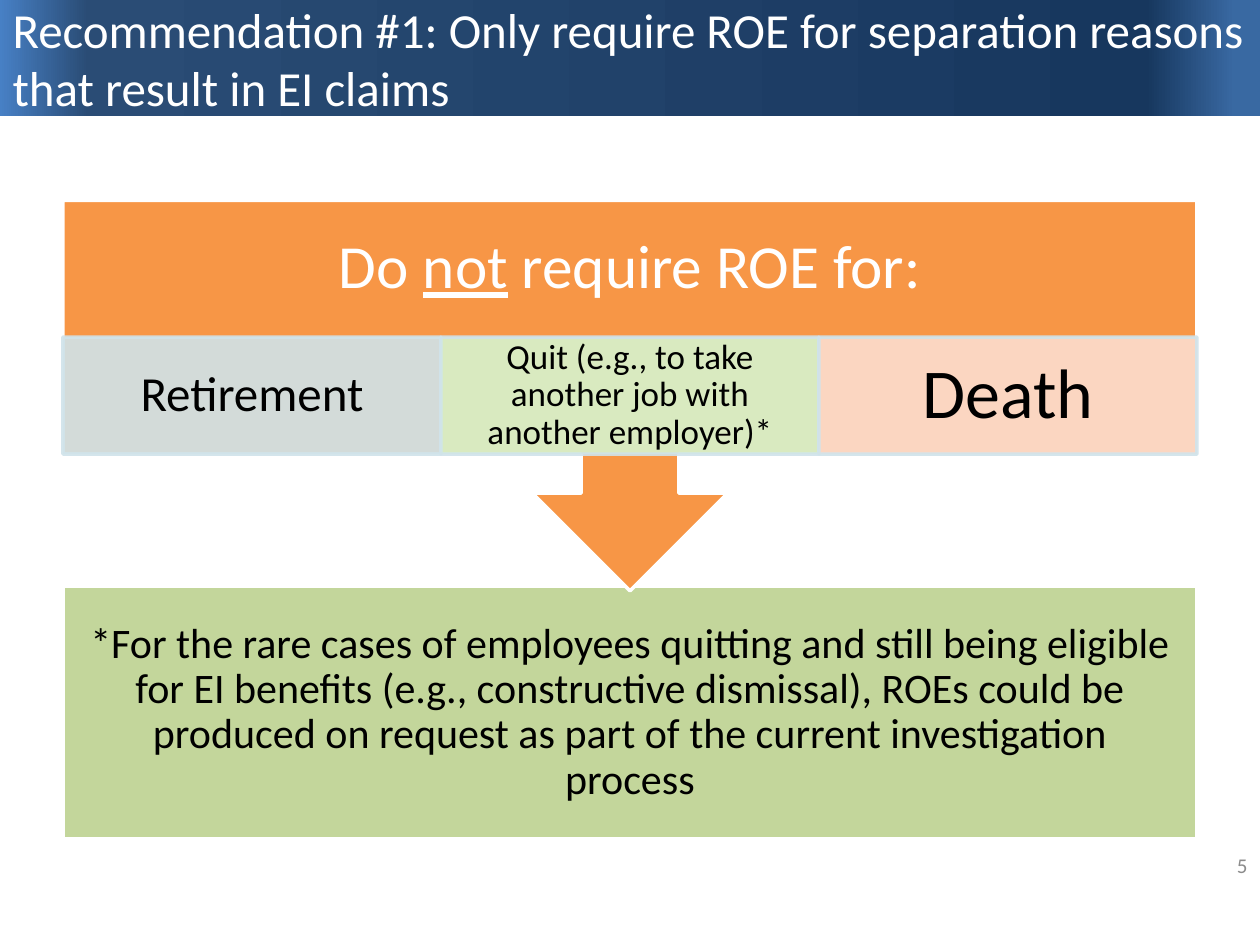
from dataclasses import dataclass

from lxml.etree import SubElement
from pptx import Presentation
from pptx.dml.color import RGBColor
from pptx.enum.shapes import MSO_SHAPE
from pptx.enum.text import MSO_ANCHOR, MSO_AUTO_SIZE, PP_ALIGN
from pptx.oxml import parse_xml
from pptx.oxml.ns import nsdecls, qn
from pptx.util import Inches, Pt


@dataclass(frozen=True)
class Theme:
    font: str = "Calibri"
    white: str = "FFFFFF"
    black: str = "000000"
    grey: str = "8C8C8C"
    orange: str = "F79646"
    green: str = "C3D69B"
    reason_line: str = "D0E3EA"
    reason_fills: tuple = ("D0E3EA", "D6F4CE", "FCDDCF")
    reason_opacity: int = 90
    bar_stops: tuple = ((2, "3969A2"), (9, "17375E"), (93, "2A4C75"), (100, "4780C5"))
    title_size: int = 28
    heading_size: int = 35
    note_size: int = 24
    number_size: int = 12
    line_width: int = 2


THEME = Theme()


def place(s, box):
    s.left, s.top, s.width, s.height = map(Inches, box)


def set_opacity(color_format, percent):
    """Add an alpha value to the solid colour of a fill."""
    color = color_format._xFill.find(qn("a:srgbClr"))
    SubElement(color, qn("a:alpha")).set("val", str(percent * 1000))


def add_block(slide, kind, box, fill, line, opacity=None):
    s = slide.shapes.add_shape(kind, *map(Inches, box))
    s.shadow.inherit = False
    s.fill.solid()
    s.fill.fore_color.rgb = RGBColor.from_string(fill)
    s.line.width = Pt(THEME.line_width)
    s.line.color.rgb = RGBColor.from_string(line)
    if opacity:
        set_opacity(s.fill.fore_color, opacity)
        set_opacity(s.line.color, opacity)
    return s


def write(s, parts, size, color, align=PP_ALIGN.CENTER, spacing=0.9, insets=None):
    """Write one paragraph; parts are (text, underlined) pairs."""
    tf = s.text_frame
    tf.word_wrap = True
    tf.auto_size = MSO_AUTO_SIZE.NONE
    tf.vertical_anchor = MSO_ANCHOR.MIDDLE
    if insets:
        tf.margin_left, tf.margin_top, tf.margin_right, tf.margin_bottom = map(Inches, insets)
    p = tf.paragraphs[0]
    p.alignment = align
    p.line_spacing = spacing
    for text, underlined in parts:
        r = p.add_run()
        r.text = text
        r.font.name = THEME.font
        r.font.size = Pt(size)
        r.font.color.rgb = RGBColor.from_string(color)
        if underlined:
            r.font.underline = True


def add_title_bar(slide, box, text):
    bar = slide.shapes.add_shape(MSO_SHAPE.RECTANGLE, *map(Inches, box))
    bar.shadow.inherit = False
    bar.line.fill.background()
    stops = "".join(
        f'<a:gs pos="{pos * 1000}"><a:srgbClr val="{color}"/></a:gs>'
        for pos, color in THEME.bar_stops
    )
    gradient = parse_xml(
        f'<a:gradFill {nsdecls("a")} rotWithShape="1"><a:gsLst>{stops}</a:gsLst>'
        '<a:lin ang="10800000" scaled="0"/></a:gradFill>'
    )
    bar._element.spPr.find(qn("a:prstGeom")).addnext(gradient)

    title = slide.shapes.title
    place(title, box)
    title._element.addprevious(bar._element)
    write(title, [(text, False)], THEME.title_size, THEME.white, PP_ALIGN.LEFT, 1.0)


def add_note(slide, box, text):
    s = add_block(slide, MSO_SHAPE.RECTANGLE, box, THEME.green, THEME.white)
    write(s, [(text, False)], THEME.note_size, THEME.black, insets=(0.19,) * 4)


def add_reasons_callout(slide, box, heading, reasons):
    """Arrow callout with a heading above a row of equal cells."""
    left, top, width, height = box
    row_height = 0.3 * height
    row_top = top + 0.35 * height
    callout = add_block(slide, MSO_SHAPE.DOWN_ARROW_CALLOUT, box, THEME.orange, THEME.white)
    write(callout, heading, THEME.heading_size, THEME.white,
          insets=(0.27, 0.27, 0.27, 0.27 + row_height))

    cell_width = width / len(reasons)
    for i, ((text, size), fill) in enumerate(zip(reasons, THEME.reason_fills)):
        cell = (left + i * cell_width, row_top, cell_width, row_height)
        s = add_block(slide, MSO_SHAPE.RECTANGLE, cell, fill,
                      THEME.reason_line, THEME.reason_opacity)
        side, edge = size / 128, size / 720
        write(s, [(text, False)], size, THEME.black, insets=(side, edge, side, edge))


def add_slide_number(slide, box, number):
    s = slide.shapes.add_textbox(*map(Inches, box))
    write(s, [(number, False)], THEME.number_size, THEME.grey, PP_ALIGN.RIGHT, 1.0)


def main():
    prs = Presentation()
    prs.slide_width, prs.slide_height = Inches(10), Inches(7.5)
    slide = prs.slides.add_slide(prs.slide_layouts.get_by_name("Title Only"))

    add_title_bar(
        slide, (0, 0, 10, 0.92),
        "Recommendation #1: Only require ROE for separation reasons that result in EI claims",
    )
    add_note(
        slide, (0.5, 4.65, 9, 2.01),
        "*For the rare cases of employees quitting and still being eligible for EI benefits "
        "(e.g., constructive dismissal), ROEs could be produced on request as part of the "
        "current investigation process",
    )
    add_reasons_callout(
        slide, (0.5, 1.59, 9, 3.1),
        [("Do ", False), ("not", True), (" require ROE for:", False)],
        [("Retirement", 28),
         ("Quit (e.g., to take another job with another employer)*", 20),
         ("Death", 40)],
    )
    add_slide_number(slide, (7.67, 6.67, 2.33, 0.4), "5")
    prs.save("out.pptx")


if __name__ == "__main__":
    main()
